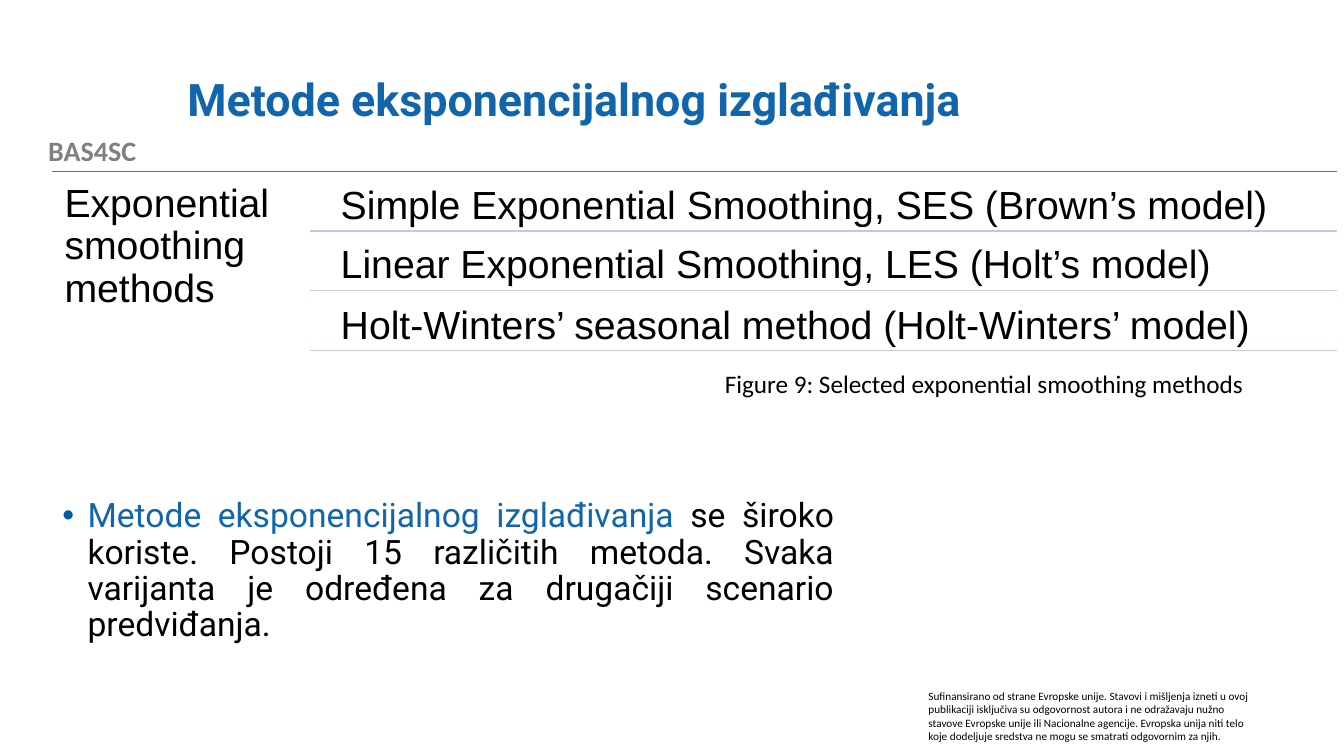
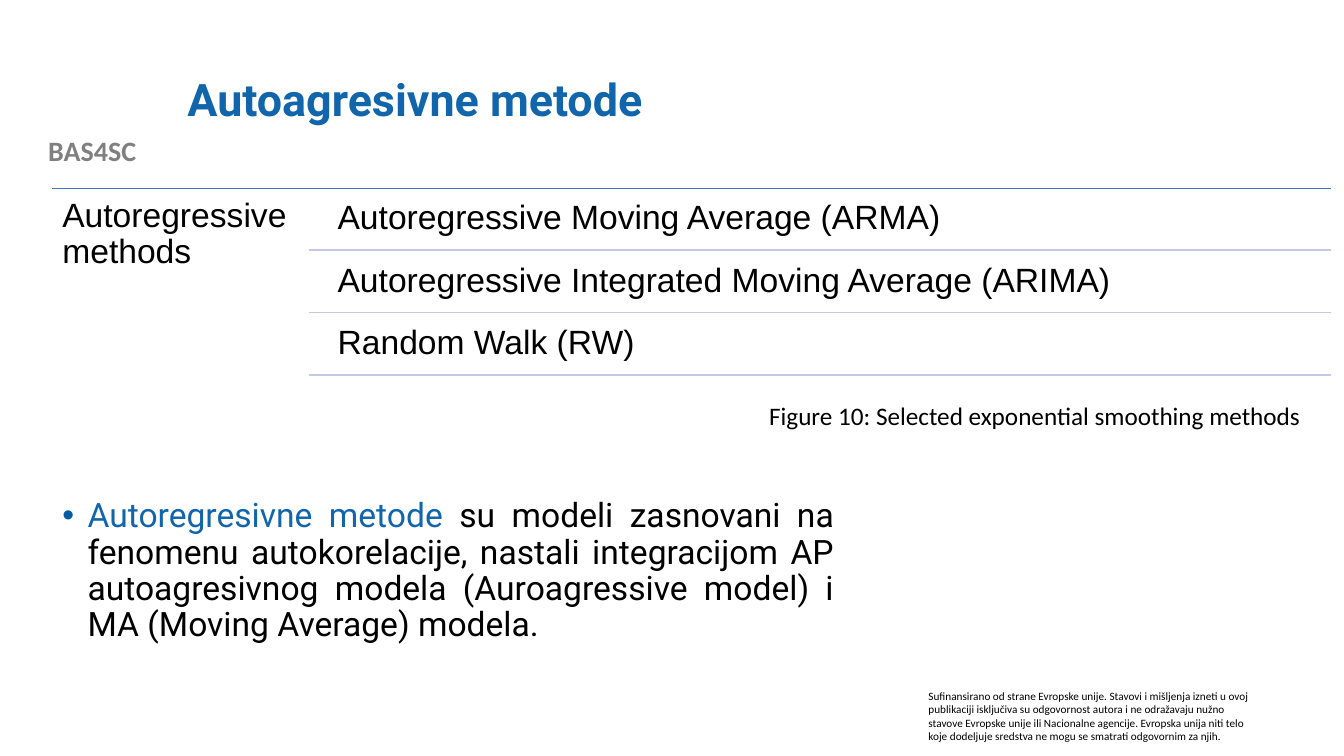
from lxml.etree import SubElement
from pptx import Presentation
from pptx.dml.color import RGBColor
from pptx.enum.shapes import MSO_CONNECTOR as Connector
from pptx.enum.text import MSO_ANCHOR as Anchor, PP_ALIGN as Align
from pptx.oxml.ns import qn
from pptx.util import Pt

PX = 9144  # 100 px to the inch
BLACK, GREY, TITLE_BLUE, BULLET_BLUE = "000000", "808080", "1065AB", "015BA6"
TOP_RULE, ROW_RULE = "4472C4", "C1C9E4"

TITLE = {"name": "Roboto", "size": Pt(32), "bold": True}
BODY = {"name": "Roboto", "size": Pt(24)}
BRAND = {"name": "Calibri", "size": Pt(20), "bold": True}
CAPTION = {"name": "Calibri", "size": Pt(18)}
FOOTER = {"name": "Calibri", "size": Pt(8)}
TIGHT = {"line_spacing": 0.9}

FOOTER_TEXT = (
    "Sufinansirano od strane Evropske unije. Stavovi i mišljenja izneti u ovoj publikaciji "
    "isključiva su odgovornost autora i ne odražavaju nužno stavove Evropske unije ili "
    "Nacionalne agencije. Evropska unija niti telo koje dodeljuje sredstva ne mogu se "
    "smatrati odgovornim za njih."
)

SLIDES = [
    {
        "title": "Metode eksponencijalnog izglađivanja",
        "group": "Exponential smoothing methods",
        "methods": [
            "Simple Exponential Smoothing, SES (Brown’s model)",
            "Linear Exponential Smoothing, LES (Holt’s model)",
            "Holt-Winters’ seasonal method (Holt-Winters’ model)",
        ],
        "list": {"top": 170, "height": 178, "right": 1326, "split": 307, "inset": 12, "size": 28},
        "caption": "Figure 9: Selected exponential smoothing methods",
        "caption_at": (709, 361),
        "lead": "Metode eksponencijalnog izglađivanja ",
        "body": "se široko koriste. Postoji 15 različitih metoda. "
                "Svaka varijanta je određena za drugačiji scenario predviđanja.",
    },
    {
        "title": "Autoagresivne metode",
        "group": "Autoregressive methods",
        "methods": [
            "Autoregressive Moving Average (ARMA)",
            "Autoregressive Integrated Moving Average (ARIMA)",
            "Random Walk (RW)",
        ],
        "list": {"top": 187, "height": 185, "right": 1320, "split": 306, "inset": 10, "size": 24},
        "caption": "Figure 10: Selected exponential smoothing methods",
        "caption_at": (753, 392),
        "lead": "Autoregresivne metode ",
        "body": "su modeli zasnovani na fenomenu autokorelacije, nastali integracijom AP "
                "autoagresivnog modela (Auroagressive model) i MA (Moving Average) modela.",
    },
]


def add_text(page, area, spans, font, para_format=None, frame_format=None, bullet=None):
    """Add a one-paragraph text box; spans are (text, colour) pairs."""
    frame = page.shapes.add_textbox(*(n * PX for n in area)).text_frame
    for key, value in {"word_wrap": True, **(frame_format or {})}.items():
        setattr(frame, key, value)
    para = frame.paragraphs[0]
    for key, value in (para_format or {}).items():
        setattr(para, key, value)
    if bullet:
        props = para._p.get_or_add_pPr()
        props.set("marL", str(25 * PX))
        props.set("indent", str(-25 * PX))
        SubElement(SubElement(props, qn("a:buClr")), qn("a:srgbClr"), val=bullet)
        SubElement(props, qn("a:buFont"), typeface="Arial")
        SubElement(props, qn("a:buChar"), char="•")
    for text, colour in spans:
        span = para.add_run()
        span.text = text
        for key, value in font.items():
            setattr(span.font, key, value)
        span.font.color.rgb = RGBColor.from_string(colour)


def add_rule(page, left, right, y, colour):
    rule = page.shapes.add_connector(
        Connector.STRAIGHT, left * PX, y * PX, right * PX, y * PX)
    rule.line.color.rgb = RGBColor.from_string(colour)
    rule.line.width = Pt(1)
    SubElement(rule._element.spPr, qn("a:effectLst"))


deck = Presentation()
deck.slide_width, deck.slide_height = 1333 * PX, 750 * PX

for content in SLIDES:
    page = deck.slides.add_slide(deck.slide_layouts[6])
    add_text(page, (0, 128, 183, 44), [("BAS4SC", GREY)], BRAND, {"alignment": Align.CENTER})
    add_text(page, (911, 679, 339, 64), [(FOOTER_TEXT, BLACK)], FOOTER)
    add_text(page, (176, 40, 1066, 122), [(content["title"], TITLE_BLUE)], TITLE, TIGHT,
             {"vertical_anchor": Anchor.MIDDLE})
    add_text(page, (52, 490, 785, 220),
             [(content["lead"], TITLE_BLUE), (content["body"], BLACK)], BODY,
             {**TIGHT, "alignment": Align.JUSTIFY}, bullet=BULLET_BLUE)

    # Group name on the left, one ruled row per method on the right
    grid = content["list"]
    top, height, right, split = (grid[key] for key in ("top", "height", "right", "split"))
    list_font = {"name": "Arial", "size": Pt(grid["size"])}
    insets = {f"margin_{side}": grid["inset"] * PX for side in ("left", "top", "right", "bottom")}
    add_rule(page, 52, right, top, TOP_RULE)
    add_text(page, (52, top, split - 52, height), [(content["group"], BLACK)],
             list_font, TIGHT, insets)
    count = len(content["methods"])
    row_height = height // count - 2
    row_left = split + 19
    for number, method in enumerate(content["methods"], 1):
        row_bottom = top + height * number // count
        add_text(page, (row_left, row_bottom - row_height, right - row_left, row_height),
                 [(method, BLACK)], list_font, TIGHT, insets)
        add_rule(page, split, right, row_bottom, ROW_RULE)

    add_text(page, (*content["caption_at"], 580, 40), [(content["caption"], BLACK)], CAPTION)

deck.save("out.pptx")
